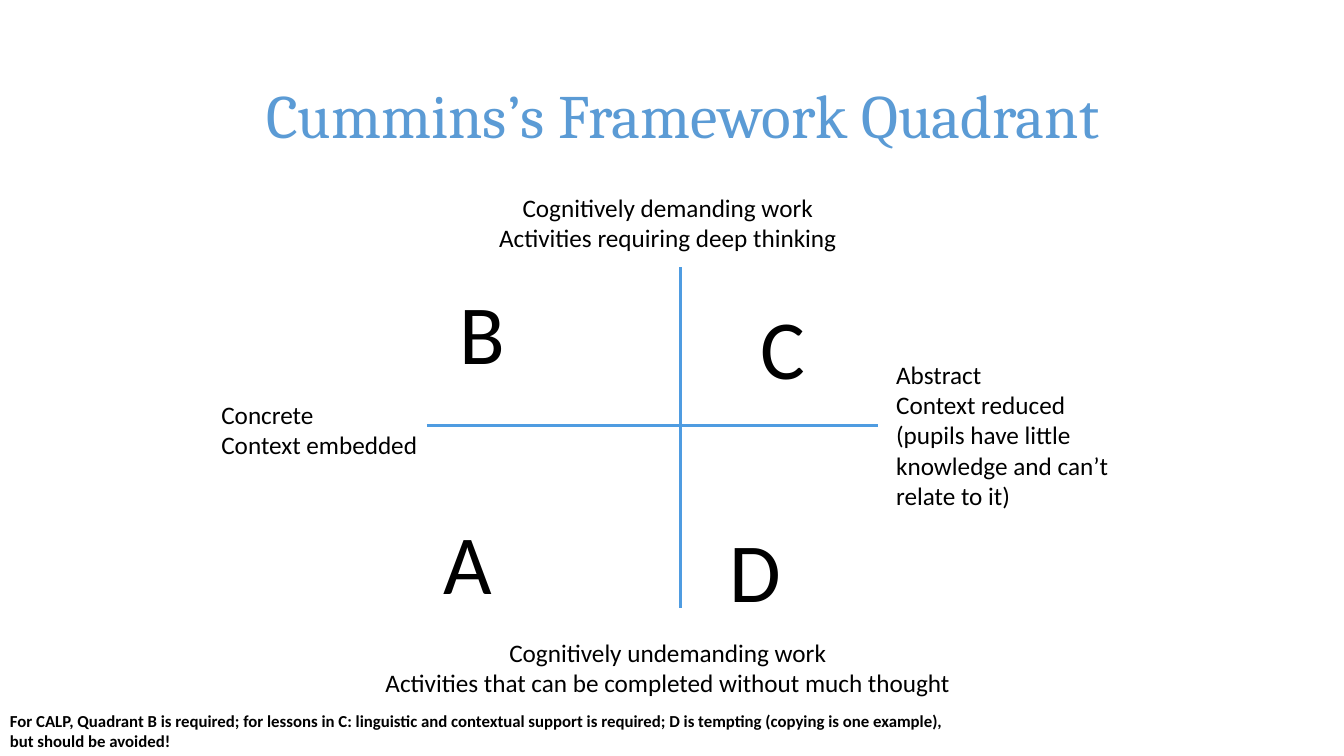
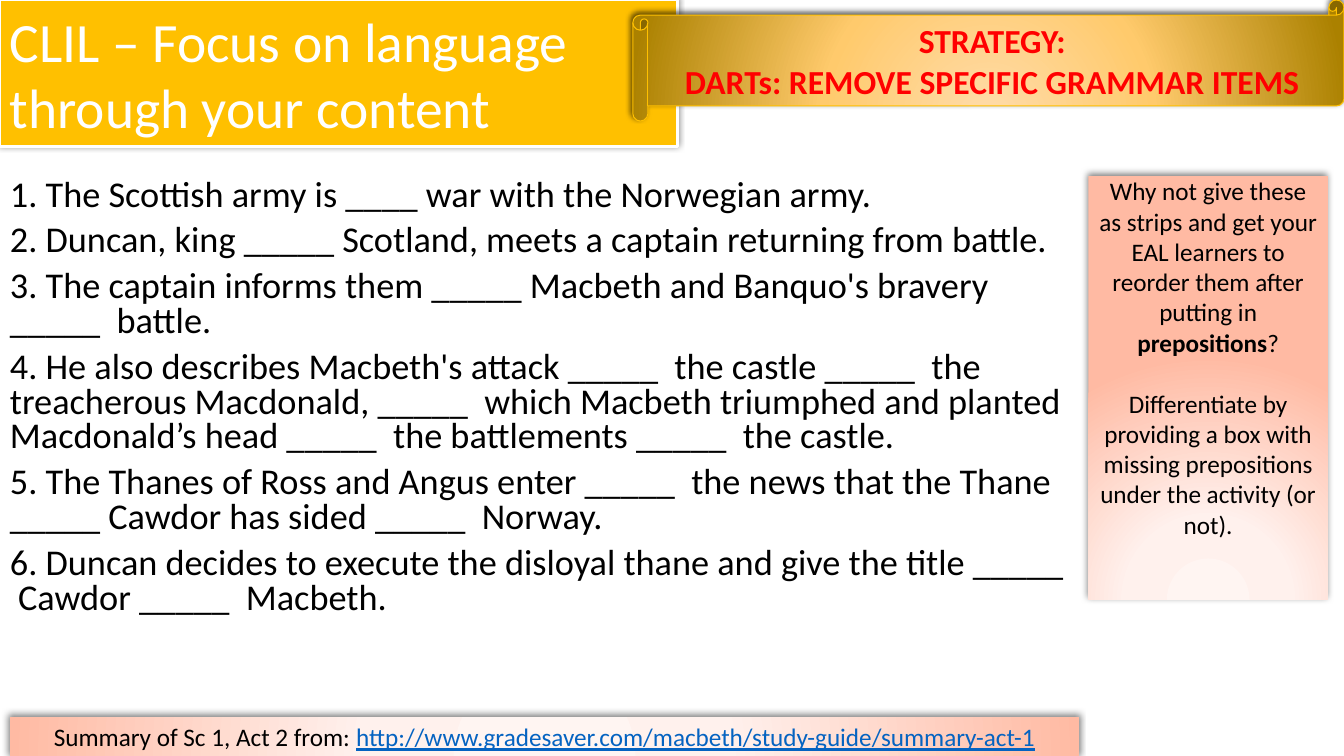
from dataclasses import dataclass

from lxml import etree
from pptx import Presentation
from pptx.dml.color import RGBColor
from pptx.enum.shapes import MSO_CONNECTOR, MSO_SHAPE
from pptx.enum.text import MSO_ANCHOR, PP_ALIGN
from pptx.oxml import parse_xml
from pptx.oxml.ns import qn
from pptx.util import Pt

RECT, SCROLL = MSO_SHAPE.RECTANGLE, MSO_SHAPE.HORIZONTAL_SCROLL
STRAIGHT = MSO_CONNECTOR.STRAIGHT
TOP, MID = MSO_ANCHOR.TOP, MSO_ANCHOR.MIDDLE
LEFT, MIDDLE = PP_ALIGN.LEFT, PP_ALIGN.CENTER
NS = "http://schemas.openxmlformats.org/drawingml/2006/main"


@dataclass(frozen=True)
class Theme:
    font: str = "Calibri"
    serif: str = "Cambria"
    ink: str = "000000"
    white: str = "FFFFFF"
    blue: str = "5B9BD5"
    axis: str = "4F9CE1"
    gold: str = "FFC000"
    red: str = "FF0000"
    link: str = "0563C1"
    peach: tuple = ((0, "FFF5F2"), (34, "FFF1ED"), (100, "FFBAA3"))
    amber: tuple = ((0, "FFDCAB"), (46, "FFCA6C"), (100, "AB8100"))
    soft: tuple = (50, 5, 2)   # shadow opacity, blur, distance
    deep: tuple = (60, 4, 3)
    title: float = 44
    head: float = 39.6
    body: float = 25.9
    call: float = 24
    label: float = 18
    note: float = 12
    mark: float = 60


T = Theme()


class Deck:
    def __init__(self):
        self.prs = Presentation()
        self.prs.slide_width, self.prs.slide_height = Pt(960), Pt(540)
        self.slide = None

    def add(self):
        self.slide = self.prs.slides.add_slide(self.prs.slide_layouts[6])

    def fill_text(self, frame, paras, size, color=T.ink, face=T.font,
                  bold=False, align=LEFT, anchor=TOP, gap=0, lead=None):
        """Each paragraph is a string or a list of (text, format) runs."""
        frame.word_wrap = True
        frame.vertical_anchor = anchor
        for i, runs in enumerate(paras):
            para = frame.paragraphs[0] if i == 0 else frame.add_paragraph()
            look = {"alignment": align, "line_spacing": lead,
                    "space_before": Pt(gap if i else 0)}
            for key, val in look.items():
                setattr(para, key, val)
            for text, extra in [(runs, {})] if isinstance(runs, str) else runs:
                run = para.add_run()
                run.text = text
                style = {"name": face, "size": Pt(size), "bold": bold,
                         "color": color, **extra}
                tint = style.pop("color")
                for key, val in style.items():
                    setattr(run.font, key, val)
                run.font.color.rgb = RGBColor.from_string(tint)

    def text(self, box, paras, size, **style):
        item = self.slide.shapes.add_textbox(*map(Pt, box))
        self.fill_text(item.text_frame, paras, size, **style)

    def line(self, start, end):
        item = self.slide.shapes.add_connector(STRAIGHT, *map(Pt, start + end))
        item.line.color.rgb = RGBColor.from_string(T.axis)
        item.line.width = Pt(2)
        etree.SubElement(item._element.spPr, qn("a:effectLst"))

    def panel(self, box, fill, paras, size, kind=RECT, edge=None,
              shade=T.soft, inset=3.6, **style):
        item = self.slide.shapes.add_shape(kind, *map(Pt, box))
        # Fill: one colour or a round gradient
        if isinstance(fill, str):
            item.fill.solid()
            item.fill.fore_color.rgb = RGBColor.from_string(fill)
        else:
            self.blend(item, fill)
        # Edge
        if edge:
            item.line.color.rgb = RGBColor.from_string(edge[0])
            item.line.width = Pt(edge[1])
        else:
            item.line.fill.background()
        self.shadow(item, *shade)
        item.text_frame.margin_top = item.text_frame.margin_bottom = Pt(inset)
        self.fill_text(item.text_frame, paras, size, **style)

    def blend(self, item, stops):
        item.fill.background()
        props = item._element.spPr
        marks = "".join(
            f'<a:gs pos="{pos * 1000}"><a:srgbClr val="{tint}"/></a:gs>'
            for pos, tint in stops)
        props.replace(props.find(qn("a:noFill")), parse_xml(
            f'<a:gradFill xmlns:a="{NS}" rotWithShape="1">'
            f'<a:gsLst>{marks}</a:gsLst><a:path path="circle">'
            '<a:fillToRect l="50000" t="155000" r="50000" b="-55000"/>'
            '</a:path></a:gradFill>'))

    def shadow(self, item, alpha, blur, dist):
        item.shadow.inherit = False
        item._element.spPr.find(qn("a:effectLst")).append(parse_xml(
            f'<a:outerShdw xmlns:a="{NS}" blurRad="{Pt(blur)}" '
            f'dist="{Pt(dist)}" dir="{245 * 60000}" algn="tl" '
            f'rotWithShape="0"><a:srgbClr val="{T.ink}">'
            f'<a:alpha val="{alpha * 1000}"/></a:srgbClr></a:outerShdw>'))


def grid(deck):
    deck.add()
    deck.text((183, 29, 711, 104), ["Cummins’s Framework Quadrant"], T.title,
              color=T.blue, face=T.serif, anchor=MID)
    # Axes
    deck.line((486, 191), (486, 434))
    deck.line((305, 304), (627, 304))
    # Quadrant letters
    for mark, left, top in (("B", 321, 196.5), ("D", 514, 366.5),
                            ("A", 309.5, 361), ("C", 536.5, 207.5)):
        deck.text((left, top, 91, 80), [mark], T.mark)
    # Axis labels
    for box, align, paras in (
        ((151, 134, 652, 51), MIDDLE,
         ["Cognitively demanding work", "Activities requiring deep thinking"]),
        ((151, 451.5, 652, 51), MIDDLE,
         ["Cognitively undemanding work",
          "Activities that can be completed without much thought"]),
        ((151, 281.5, 170, 51), LEFT, ["Concrete", "Context embedded"]),
        ((633, 253, 170, 117), LEFT,
         ["Abstract", "Context reduced (pupils have little knowledge "
          "and can’t relate to it)"]),
    ):
        deck.text(box, paras, T.label, align=align)
    # Note
    deck.text((0, 504, 686, 36), [
        "For CALP, Quadrant B is required; for lessons in C: linguistic and "
        "contextual support is required; D is tempting (copying is one "
        "example), but should be avoided!"], T.note, bold=True)


def task(deck):
    deck.add()
    # Gap-fill lines
    deck.text((0, 124.5, 771, 343), [
        "1. The Scottish army is ____ war with the Norwegian army.",
        "2. Duncan, king _____ Scotland, meets a captain returning from "
        "battle.",
        "3. The captain informs them _____ Macbeth and Banquo's bravery "
        "_____  battle.",
        "4. He also describes Macbeth's attack _____  the castle _____  the "
        "treacherous Macdonald, _____  which Macbeth triumphed and planted "
        "Macdonald’s head _____  the battlements _____  the castle.",
        "5. The Thanes of Ross and Angus enter _____  the news that the "
        "Thane _____ Cawdor has sided _____  Norway.",
        "6. Duncan decides to execute the disloyal thane and give the title "
        "_____  Cawdor _____  Macbeth.",
    ], T.body, gap=7.8, lead=0.8)
    # Title band
    deck.panel((0, 0, 484, 104.5), T.gold,
               ["CLIL – Focus on language through your content"], T.head,
               edge=(T.white, 2), color=T.white, anchor=MID)
    # Side tip
    deck.panel((777.5, 125.5, 171, 303), T.peach, [
        [("Why not give these as strips and get your EAL learners to reorder "
          "them after putting in ", {}),
         ("prepositions", {"bold": True}), ("?", {})],
        "Differentiate by providing a box with missing prepositions under "
        "the activity (or not).",
    ], T.label, align=MIDDLE, gap=22, inset=0)
    # Source bar
    deck.panel((7, 512.5, 764, 27.5), T.peach, [
        [("Summary of Sc 1, Act 2 from: ", {}),
         ("http://www.gradesaver.com/macbeth/study-guide/summary-act-1",
          {"color": T.link, "underline": True})],
    ], T.label, align=MIDDLE, anchor=MID)
    # Strategy scroll
    deck.panel((452, 0, 508, 86.5), T.amber,
               ["STRATEGY:", "DARTs: REMOVE SPECIFIC GRAMMAR ITEMS"], T.call,
               kind=SCROLL, edge=(T.gold, 0.75), shade=T.deep, color=T.red,
               bold=True, align=MIDDLE, anchor=MID)


def main():
    deck = Deck()
    grid(deck)
    task(deck)
    deck.prs.save("out.pptx")


if __name__ == "__main__":
    main()
